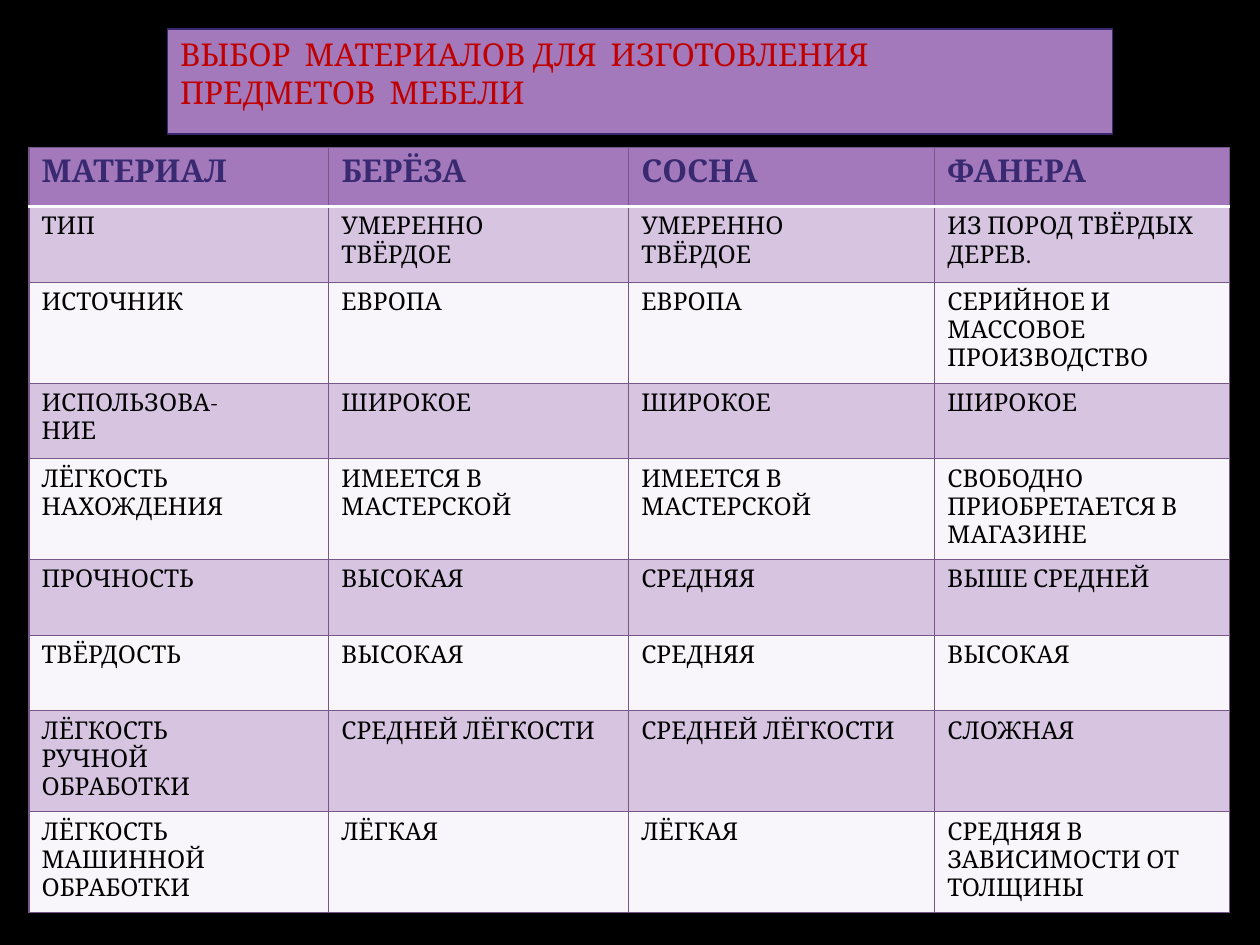
from pptx import Presentation
from pptx.dml.color import RGBColor
from pptx.enum.text import MSO_ANCHOR as Anchor, MSO_AUTO_SIZE as AutoSize, PP_ALIGN as Align
from pptx.oxml import parse_xml
from pptx.oxml.ns import nsdecls
from pptx.util import Inches, Pt

COLORS = {
    "background": "000000",
    "accent": "A379BB",
    "odd_row": "D6C4E1",
    "even_row": "F8F6FA",
    "border": "77568A",
    "header_rule": "FFFFFF",
    "heading": "382971",
    "title": "C00000",
    "body": "000000",
}
COLUMN_WIDTHS = [2.38, 2.38, 2.43, 2.34]
HEADER_HEIGHT, LOW_ROW, TALL_ROW = 0.47, 0.6, 0.8
TALL_ROWS = {2, 4, 7, 8}
MATERIALS = [
    ["МАТЕРИАЛ", "БЕРЁЗА", "СОСНА", "ФАНЕРА"],
    ["ТИП", "УМЕРЕННО\nТВЁРДОЕ", "УМЕРЕННО\nТВЁРДОЕ", "ИЗ ПОРОД ТВЁРДЫХ ДЕРЕВ."],
    ["ИСТОЧНИК", "ЕВРОПА", "ЕВРОПА", "СЕРИЙНОЕ И МАССОВОЕ ПРОИЗВОДСТВО"],
    ["ИСПОЛЬЗОВА-\nНИЕ", "ШИРОКОЕ", "ШИРОКОЕ", "ШИРОКОЕ"],
    ["ЛЁГКОСТЬ\nНАХОЖДЕНИЯ", "ИМЕЕТСЯ В МАСТЕРСКОЙ", "ИМЕЕТСЯ В МАСТЕРСКОЙ",
     "СВОБОДНО ПРИОБРЕТАЕТСЯ В МАГАЗИНЕ"],
    ["ПРОЧНОСТЬ", "ВЫСОКАЯ", "СРЕДНЯЯ", "ВЫШЕ СРЕДНЕЙ"],
    ["ТВЁРДОСТЬ", "ВЫСОКАЯ", "СРЕДНЯЯ", "ВЫСОКАЯ"],
    ["ЛЁГКОСТЬ\nРУЧНОЙ\nОБРАБОТКИ", "СРЕДНЕЙ ЛЁГКОСТИ", "СРЕДНЕЙ ЛЁГКОСТИ", "СЛОЖНАЯ"],
    ["ЛЁГКОСТЬ\nМАШИННОЙ\nОБРАБОТКИ", "ЛЁГКАЯ", "ЛЁГКАЯ", "СРЕДНЯЯ В ЗАВИСИМОСТИ ОТ ТОЛЩИНЫ"],
]


def write_text(text_frame, text, size=14, color="body", bold=False):
    text_frame.text = text
    for paragraph in text_frame.paragraphs:
        paragraph.alignment = Align.LEFT
        for run in paragraph.runs:
            run.font.name = "Cambria"
            run.font.size = Pt(size)
            run.font.bold = bold
            run.font.color.rgb = RGBColor.from_string(COLORS[color])


def add_border(cell, side, color="border", width=0.75):
    cell._tc.get_or_add_tcPr().append(parse_xml(
        f'<a:ln{side} {nsdecls("a")} w="{Pt(width)}"><a:solidFill>'
        f'<a:srgbClr val="{COLORS[color]}"/></a:solidFill></a:ln{side}>'))


presentation = Presentation()
presentation.slide_width = Inches(10)
presentation.slide_height = Inches(7.5)
slide = presentation.slides.add_slide(presentation.slide_layouts[5])
slide.background.fill.solid()
slide.background.fill.fore_color.rgb = RGBColor.from_string(COLORS["background"])

title = slide.shapes.title
title.left, title.top = Inches(1.33), Inches(0.23)
title.width, title.height = Inches(7.5), Inches(0.71)
title.fill.solid()
title.fill.fore_color.rgb = RGBColor.from_string(COLORS["accent"])
title.line.color.rgb = RGBColor.from_string(COLORS["heading"])
title.line.width = Pt(0.75)
title.text_frame.word_wrap = True
title.text_frame.auto_size = AutoSize.SHAPE_TO_FIT_TEXT
title.text_frame.vertical_anchor = Anchor.TOP
write_text(title.text_frame, "ВЫБОР  МАТЕРИАЛОВ ДЛЯ  ИЗГОТОВЛЕНИЯ\nПРЕДМЕТОВ  МЕБЕЛИ",
           size=18, color="title")

row_heights = [HEADER_HEIGHT] + [TALL_ROW if index in TALL_ROWS else LOW_ROW
                                 for index in range(1, len(MATERIALS))]
table = slide.shapes.add_table(
    len(MATERIALS), len(COLUMN_WIDTHS), Inches(0.23), Inches(1.17),
    Inches(sum(COLUMN_WIDTHS)), Inches(sum(row_heights))).table
table.horz_banding = False
for column, width in zip(table.columns, COLUMN_WIDTHS):
    column.width = Inches(width)

for row_index, (row, height, texts) in enumerate(zip(table.rows, row_heights, MATERIALS)):
    row.height = Inches(height)
    is_header = row_index == 0
    fill = "accent" if is_header else "odd_row" if row_index % 2 else "even_row"
    for cell, text in zip(row.cells, texts):
        for side in "LR":
            add_border(cell, side)
        if row_index == 1:
            add_border(cell, "T", "header_rule", 2)
        else:
            add_border(cell, "T")
        if is_header:
            add_border(cell, "B", "header_rule", 2)
            write_text(cell.text_frame, text, size=18, color="heading", bold=True)
        else:
            add_border(cell, "B")
            write_text(cell.text_frame, text)
        cell.fill.solid()
        cell.fill.fore_color.rgb = RGBColor.from_string(COLORS[fill])

presentation.save("out.pptx")
